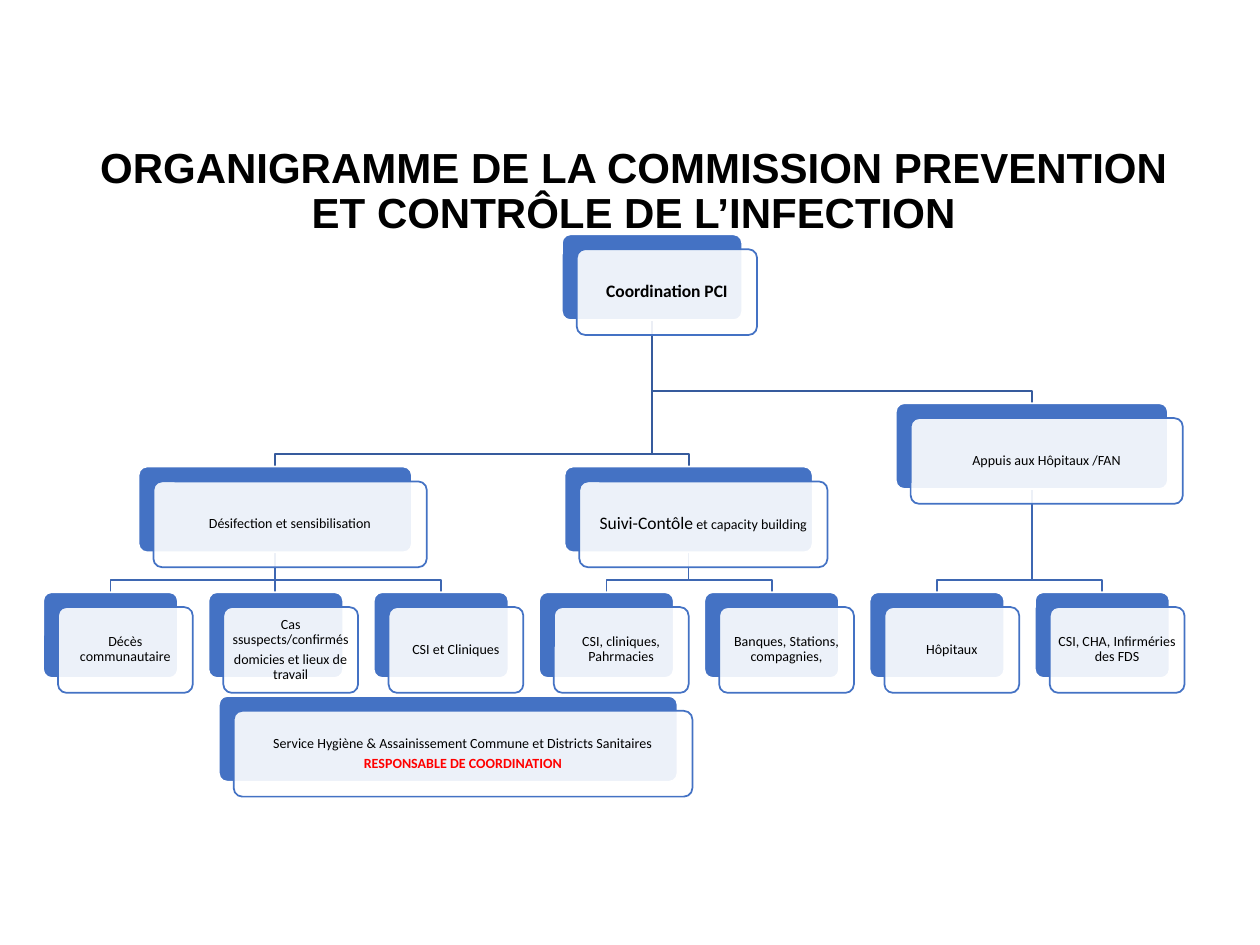
from lxml import etree
from pptx import Presentation
from pptx import util as u
from pptx.dml.color import RGBColor
from pptx.enum import shapes as s, text as t
from pptx.oxml.ns import qn

Pt = u.Pt
HIGH, SHIFT, BEND = 49, 8.5, 7
BLUE, BLACK, RED = "4472C4", "000000", "FF0000"


def tint(fmt, hue):
    """Give a fill or font colour from a hex string."""
    fmt.rgb = RGBColor.from_string(hue)


def write(frame, paras, face):
    """Fill a frame; each paragraph is a list of (words, size, colour, bold)."""
    frame.word_wrap = True
    frame.vertical_anchor = t.MSO_ANCHOR.MIDDLE
    for i, runs in enumerate(paras):
        para = frame.add_paragraph() if i else frame.paragraphs[0]
        para.alignment = t.PP_ALIGN.CENTER
        para.line_spacing = 0.9
        para.space_after = Pt(2.8)
        for words, size, hue, bold in runs:
            run = para.add_run()
            run.text = words
            run.font.name, run.font.size, run.font.bold = face, Pt(size), bold
            tint(run.font.color, hue)


prs = Presentation()
prs.slide_width, prs.slide_height = Pt(720), Pt(540)
slide = prs.slides.add_slide(prs.slide_layouts[6])
draw = slide.shapes

title = draw.add_textbox(Pt(33.1), Pt(77), Pt(658), Pt(65.5))
write(title.text_frame, [[(
    "ORGANIGRAMME DE LA COMMISSION PREVENTION ET CONTRÔLE DE L’INFECTION",
    24, BLACK, True)]], "Arial")

# name: left, top, width, paragraphs
cards = {
    "head": (321.1, 133.9, 103, [[("Coordination PCI", 10, BLACK, True)]]),
    "clean": (79.2, 266.6, 156.2,
              [[("Désifection et sensibilisation", 8, BLACK, False)]]),
    "check": (322.6, 266.6, 141.8,
              [[("Suivi-Contôle", 10, BLACK, False),
                (" et capacity building", 8, BLACK, False)]]),
    "help": (511.9, 230.4, 155.5,
             [[("Appuis aux Hôpitaux /FAN", 8, BLACK, False)]]),
    "duty": (125.1, 397.7, 262.1,
             [[("Service Hygiène & Assainissement Commune et Districts Sanitaires",
                8, BLACK, False)],
              [("RESPONSABLE DE COORDINATION", 8, RED, True)]]),
}
leaves = [
    ("clean", ["Décès communautaire"]),
    ("clean", ["Cas ssuspects/confirmés", "domicies et lieux de travail"]),
    ("clean", ["CSI et Cliniques"]),
    ("check", ["CSI, cliniques, Pahrmacies"]),
    ("check", ["Banques, Stations, compagnies,"]),
    ("help", ["Hôpitaux"]),
    ("help", ["CSI, CHA, Infirméries des FDS"]),
]
links = [("head", name, "365B9D") for name in ("clean", "check", "help")]
for i, (boss, lines) in enumerate(leaves):
    cards[i] = (24.7 + 94.45 * i, 338.4, 77,
                [[(line, 8, BLACK, False)] for line in lines])
    links.append((boss, i, "3E67B2"))

for boss, name, hue in links:
    left, top, wide, _ = cards[boss]
    x1, y1 = left + wide / 2, top + HIGH
    left, y2, wide, _ = cards[name]
    x2 = left + wide / 2
    if abs(x1 - x2) < 1:
        line = draw.add_connector(s.MSO_CONNECTOR.STRAIGHT,
                                  Pt(x1), Pt(y1), Pt(x1), Pt(y2))
        etree.SubElement(line._element.spPr, qn("a:effectLst"))
    else:
        path = draw.build_freeform(Pt(x1), Pt(y1))
        bend = y2 - BEND
        path.add_line_segments([(Pt(x), Pt(y)) for x, y in
                                ((x1, bend), (x2, bend), (x2, y2))], close=False)
        line = path.convert_to_shape()
        line.fill.background()
        line.shadow.inherit = False
    line.line.width = Pt(1)
    tint(line.line.color, hue)

for left, top, wide, paras in cards.values():
    for gap, fill, edge in ((0, BLUE, "FFFFFF"), (SHIFT, "FFFFFF", BLUE)):
        card = draw.add_shape(s.MSO_SHAPE.ROUNDED_RECTANGLE, Pt(left + gap),
                              Pt(top + gap), Pt(wide), Pt(HIGH))
        card.adjustments[0] = 0.1
        card.shadow.inherit = False
        card.fill.solid()
        tint(card.fill.fore_color, fill)
        card.line.width = Pt(1)
        tint(card.line.color, edge)
    # the front card lets the back one show through
    shade = card._element.spPr.find(qn("a:solidFill"))[0]
    etree.SubElement(shade, qn("a:alpha"), val="90000")
    frame = card.text_frame
    frame.margin_left = frame.margin_right = Pt(2.4)
    frame.margin_top = frame.margin_bottom = Pt(2.4)
    write(frame, paras, "Calibri")

prs.save("out.pptx")
